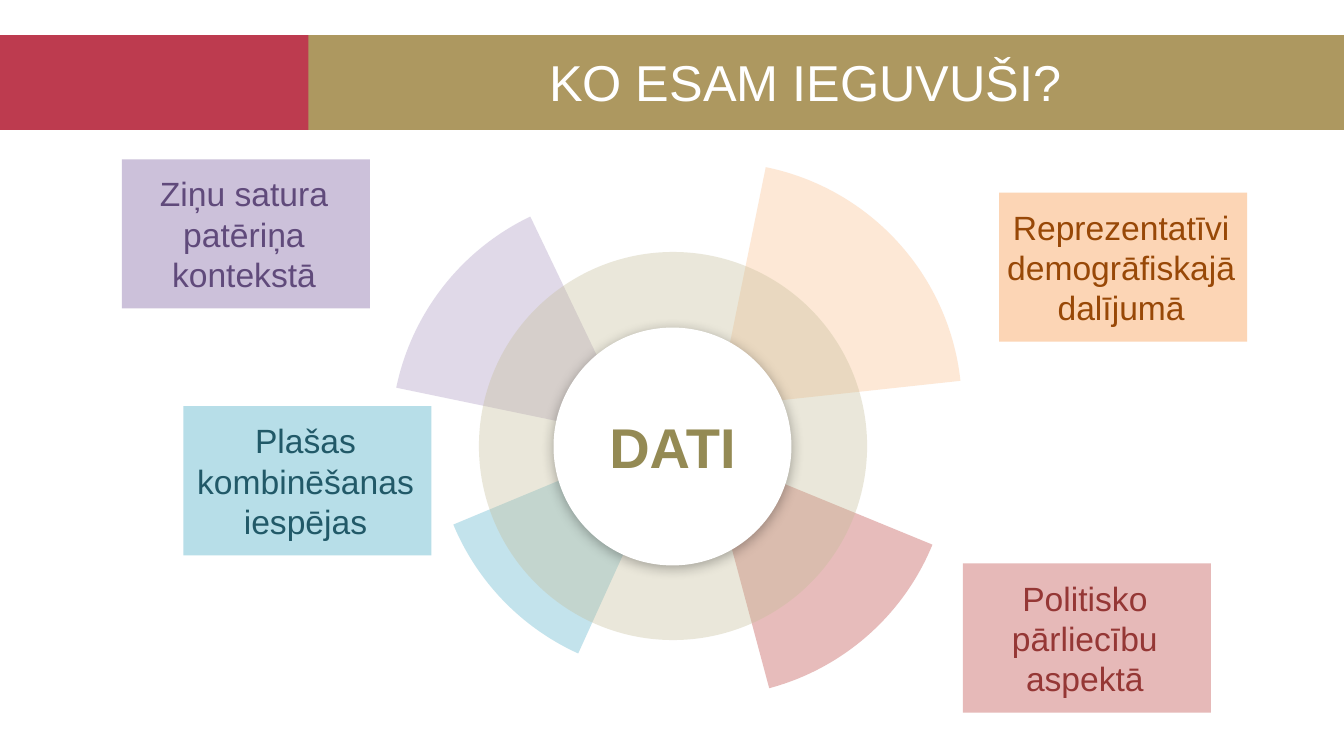
from lxml import etree
from pptx import Presentation
from pptx.dml.color import RGBColor
from pptx.enum import shapes, text
from pptx.oxml import ns
from pptx.util import Inches, Pt

FONT = "Arial"
WHITE = RGBColor(0xFF, 0xFF, 0xFF)
BLACK = RGBColor(0, 0, 0)
RED = RGBColor(0xBD, 0x3B, 0x4F)
GOLD = RGBColor(0xAD, 0x98, 0x60)
SAND = RGBColor(0xC4, 0xBD, 0x97)
OLIVE = RGBColor(0x94, 0x8A, 0x54)
PURPLE = RGBColor(0xB3, 0xA2, 0xC7)
PURPLE_PALE = RGBColor(0xCC, 0xC1, 0xDA)
PURPLE_DARK = RGBColor(0x60, 0x4A, 0x7B)
AQUA = RGBColor(0x93, 0xCD, 0xDD)
AQUA_PALE = RGBColor(0xB7, 0xDE, 0xE8)
AQUA_DARK = RGBColor(0x21, 0x59, 0x68)
ROSE = RGBColor(0xD9, 0x96, 0x94)
ROSE_PALE = RGBColor(0xE6, 0xB9, 0xB8)
ROSE_DARK = RGBColor(0x95, 0x37, 0x35)
ORANGE = RGBColor(0xFA, 0xC0, 0x90)
ORANGE_PALE = RGBColor(0xFC, 0xD5, 0xB5)
ORANGE_DARK = RGBColor(0x98, 0x48, 0x07)

LABEL_SIZE = (2.46, 1.48)
LABELS = [
    ("Politisko pārliecību aspektā", (9.55, 5.59), ROSE_PALE, ROSE_DARK),
    ("Reprezentatīvi demogrāfiskajā dalījumā", (9.91, 1.91), ORANGE_PALE, ORANGE_DARK),
    ("Ziņu satura patēriņa kontekstā", (1.21, 1.58), PURPLE_PALE, PURPLE_DARK),
    ("Plašas kombinēšanas iespējas", (1.82, 4.03), AQUA_PALE, AQUA_DARK),
]
WHEEL_BOX = (3.88, 1.61, 5.66, 5.16)
WEDGE_SIZE = 4.86
WEDGES = [
    ((0, 0.3), 334.4, (130.39, 162), PURPLE, 40),
    ((0.43, 0.23), 247.4, (136.22, 162), AQUA, 55),
    ((0.69, 0.44), 165, (130.39, 162), ROSE, 63),
    ((0.8, 0), 64.2, (130.39, 173.78), ORANGE, 36),
]


def add_alpha(color_element, percent):
    """Set the opacity of a colour element."""
    alpha = etree.SubElement(color_element, ns.qn("a:alpha"))
    alpha.set("val", str(percent * 1000))


def add_figure(page, kind, box, color, opacity=100):
    """Add a flat preset shape without outline."""
    figure = page.shapes.add_shape(kind, *map(Inches, box))
    figure.shadow.inherit = False
    figure.fill.solid()
    figure.fill.fore_color.rgb = color
    figure.line.fill.background()
    if opacity < 100:
        fill = figure.element.spPr.find(ns.qn("a:solidFill"))
        add_alpha(fill[0], opacity)
    return figure


def add_soft_shadow(figure):
    """Put a soft shadow just below a shape."""
    effects = figure.element.spPr.find(ns.qn("a:effectLst"))
    shadow = etree.SubElement(effects, ns.qn("a:outerShdw"))
    settings = {"blurRad": Pt(9), "dist": Pt(1.5), "dir": 90 * 60000}
    for name, value in settings.items():
        shadow.set(name, str(int(value)))
    shadow.set("algn", "ctr")
    shadow.set("rotWithShape", "0")
    color = etree.SubElement(shadow, ns.qn("a:srgbClr"))
    color.set("val", str(BLACK))
    add_alpha(color, 29)


def write_text(figure, words, size, color, insets, bold=False):
    """Write one centred paragraph in a shape."""
    frame = figure.text_frame
    frame.word_wrap = True
    frame.auto_size = text.MSO_AUTO_SIZE.NONE
    frame.vertical_anchor = text.MSO_ANCHOR.MIDDLE
    (frame.margin_left, frame.margin_top,
     frame.margin_right, frame.margin_bottom) = map(Inches, insets)
    para = frame.paragraphs[0]
    para.alignment = text.PP_ALIGN.CENTER
    span = para.add_run()
    span.text = words
    span.font.name = FONT
    span.font.size = Pt(size)
    span.font.bold = bold
    span.font.color.rgb = color


def add_header(page, box):
    """Add the two-coloured band and the title on it."""
    left, top, width, height = box
    rectangle = shapes.MSO_SHAPE.RECTANGLE
    add_figure(page, rectangle, (left, top, width - 0.1, height), RED)
    add_figure(page, rectangle, (left + 3.06, top, width - 3.06, height), GOLD)
    title = page.shapes.title
    title.element.getparent().append(title.element)
    title.left, title.top = Inches(left + 3.33), Inches(top + 0.08)
    title.width, title.height = Inches(9.32), Inches(0.76)
    write_text(title, "KO ESAM IEGUVUŠI?", 36, WHITE, (0, 0, 0, 0))


def add_wheel(page, box):
    """Add the coloured wedges, the ring and the hub."""
    left, top = box[:2]
    for (right, down), turn, angles, color, opacity in WEDGES:
        place = (left + right, top + down, WEDGE_SIZE, WEDGE_SIZE)
        wedge = add_figure(page, shapes.MSO_SHAPE.PIE, place, color, opacity)
        wedge.rotation = turn
        for index, angle in enumerate(angles):
            wedge.adjustments[index] = angle
    oval = shapes.MSO_SHAPE.OVAL
    add_figure(page, oval, (left + 0.87, top + 0.89, 3.85, 3.85), SAND, 35)
    hub = add_figure(page, oval, (left + 1.61, top + 1.64, 2.36, 2.36), WHITE)
    add_soft_shadow(hub)
    write_text(hub, "DATI", 40, OLIVE, (0.13,) * 4, bold=True)


def add_label(page, box, words, fill, color):
    """Add one coloured label."""
    label = add_figure(page, shapes.MSO_SHAPE.RECTANGLE, box, fill)
    write_text(label, words, 24, color, (0.04, 0.13, 0.08, 0.13))


def main():
    """Build the slide and save it."""
    deck = Presentation()
    deck.slide_width, deck.slide_height = Inches(13.33), Inches(7.5)
    page = deck.slides.add_slide(deck.slide_layouts.get_by_name("Title Only"))
    add_header(page, (0, 0.35, 13.33, 0.94))
    add_wheel(page, WHEEL_BOX)
    for words, corner, fill, color in LABELS:
        add_label(page, corner + LABEL_SIZE, words, fill, color)
    deck.save("out.pptx")


if __name__ == "__main__":
    main()
